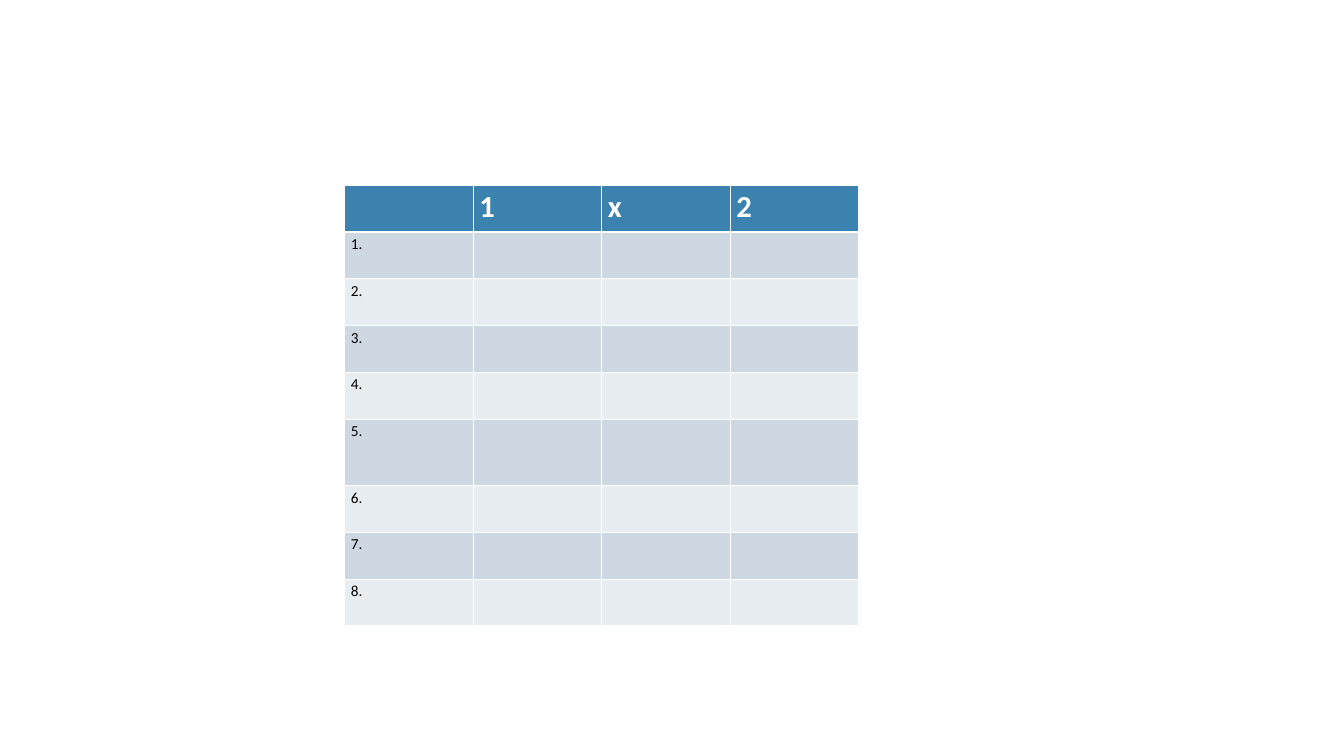
from lxml import etree
from pptx import Presentation
from pptx.dml.color import RGBColor
from pptx.oxml.ns import qn
from pptx.util import Inches, Pt

FONT = "Calibri"
WHITE = "FFFFFF"
HEADER = {"fill": "3C82AF", "font": {"size": Pt(36), "bold": True}, "color": WHITE}
BANDS = ["CED8E3", "E8EDF2"]
BODY_FONT = {"size": Pt(18), "bold": False}

TABLE_LEFT, TABLE_TOP, TABLE_WIDTH, TABLE_HEIGHT = 5.64, 3.03, 8.41, 7.21
TALL_ROW, TALL_HEIGHT = 5, 1.09
HEADINGS = ["", "1", "x", "2"]
MATCH_COUNT = 8


def rgb(value):
    return RGBColor.from_string(value)


class CouponPage:
    def __init__(self, deck):
        self.page = deck.slides.add_slide(deck.slide_layouts[6])

    def border(self, cell, side, width):
        line = etree.SubElement(
            cell._tc.get_or_add_tcPr(), qn(f"a:ln{side}"), w=str(Pt(width))
        )
        fill = etree.SubElement(line, qn("a:solidFill"))
        etree.SubElement(fill, qn("a:srgbClr"), val=WHITE)

    def cell(self, cell, text, style, widths):
        for side, width in widths.items():
            self.border(cell, side, width)
        cell.fill.solid()
        cell.fill.fore_color.rgb = rgb(style["fill"])
        font = cell.text_frame.paragraphs[0].font
        if text:
            span = cell.text_frame.paragraphs[0].add_run()
            span.text = text
            font = span.font
        for name, value in {"name": FONT, **style["font"]}.items():
            setattr(font, name, value)
        font.color.rgb = rgb(style["color"])

    def table(self, rows):
        frame = self.page.shapes.add_table(
            len(rows), len(rows[0]), Inches(TABLE_LEFT), Inches(TABLE_TOP),
            Inches(TABLE_WIDTH), Inches(TABLE_HEIGHT),
        )
        table = frame.table
        row_height = (TABLE_HEIGHT - TALL_HEIGHT) / (len(rows) - 1)
        for index, texts in enumerate(rows):
            height = TALL_HEIGHT if index == TALL_ROW else row_height
            table.rows[index].height = Inches(height)
            band = {"fill": BANDS[(index - 1) % 2], "font": BODY_FONT, "color": "000000"}
            style = band if index else HEADER
            widths = {"L": 1, "R": 1, "T": 3 if index == 1 else 1, "B": 1 if index else 3}
            for column, text in enumerate(texts):
                self.cell(table.cell(index, column), text, style, widths)


def main():
    deck = Presentation()
    deck.slide_width = Inches(21.99)
    deck.slide_height = Inches(12.37)
    matches = [[f"{number}.", "", "", ""] for number in range(1, MATCH_COUNT + 1)]
    CouponPage(deck).table([HEADINGS] + matches)
    deck.save("out.pptx")


if __name__ == "__main__":
    main()
